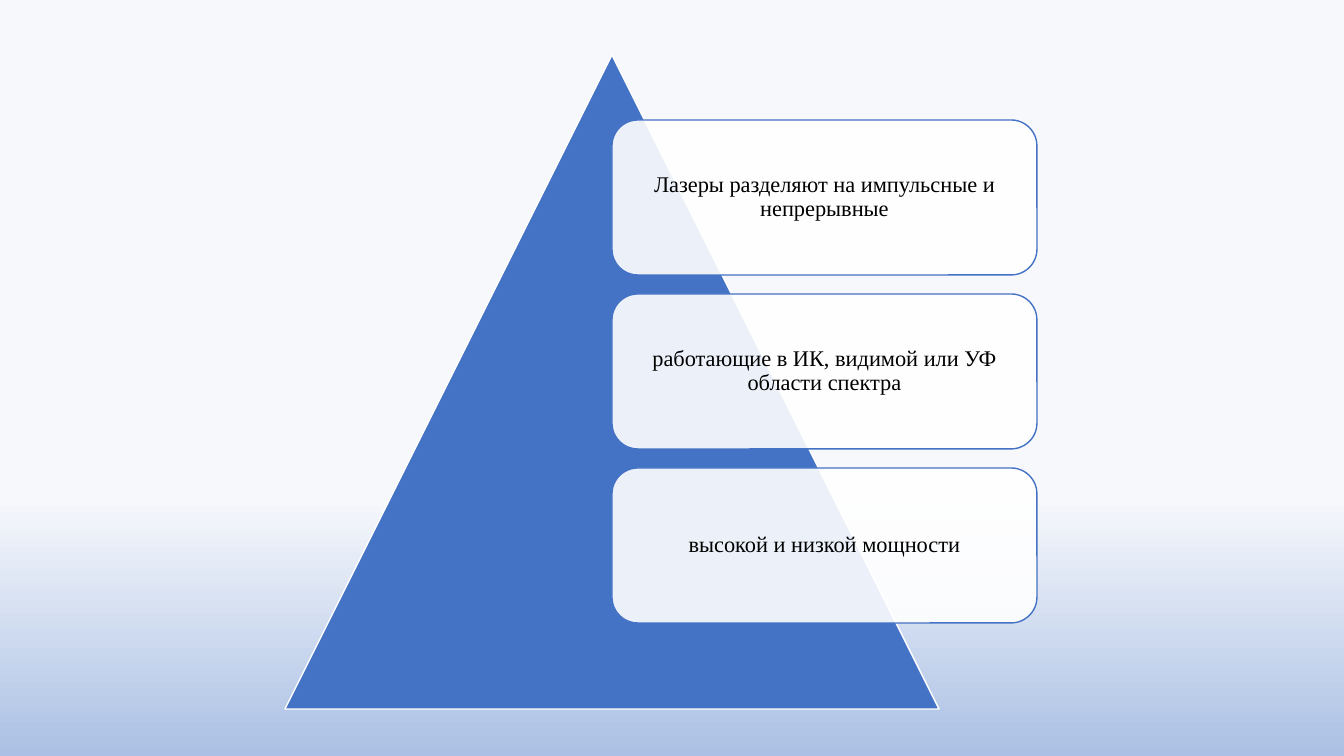
from dataclasses import dataclass

from lxml.etree import SubElement
from pptx import Presentation
from pptx.dml.color import RGBColor as RGB
from pptx.enum.shapes import MSO_SHAPE as SHAPE
from pptx.enum.text import MSO_ANCHOR, PP_ALIGN
from pptx.oxml.ns import qn
from pptx.util import Pt

PX = 914400 / 100.8
CARD_TEXTS = (
    "Лазеры разделяют на импульсные и непрерывные",
    "работающие в ИК, видимой или УФ области спектра",
    "высокой и низкой мощности",
)


@dataclass(frozen=True)
class Theme:
    accent: RGB = RGB(0x44, 0x72, 0xC4)
    white: RGB = RGB(0xFF, 0xFF, 0xFF)
    text: RGB = RGB(0, 0, 0)
    bg_top: RGB = RGB(0xF6, 0xF8, 0xFC)
    bg_bottom: RGB = RGB(0xAB, 0xC0, 0xE4)
    card_opacity: int = 90
    font: str = "Times New Roman"
    size: Pt = Pt(16)
    line: Pt = Pt(1)


THEME = Theme()


def px(n):
    return round(n * PX)


def add_background(s):
    fill = s.background.fill
    fill.gradient()
    fill.gradient_angle = 270
    stops = ((0.66, THEME.bg_top), (1, THEME.bg_bottom))
    for stop, (position, color) in zip(fill.gradient_stops, stops):
        stop.position = position
        stop.color.rgb = color


def add_outlined(s, kind, box, fill, line):
    sp = s.shapes.add_shape(kind, *map(px, box))
    sp.shadow.inherit = False
    sp.fill.solid()
    sp.fill.fore_color.rgb = fill
    sp.line.color.rgb = line
    sp.line.width = THEME.line
    return sp


def add_card(s, box, text):
    sp = add_outlined(s, SHAPE.ROUNDED_RECTANGLE, box, THEME.white, THEME.accent)
    color = sp.element.spPr.find(qn("a:solidFill"))[0]
    SubElement(color, qn("a:alpha"), val=str(THEME.card_opacity * 1000))
    tf = sp.text_frame
    tf.word_wrap = True
    tf.vertical_anchor = MSO_ANCHOR.MIDDLE
    tf.margin_left = tf.margin_right = tf.margin_top = tf.margin_bottom = px(15)
    p = tf.paragraphs[0]
    p.text = text
    p.alignment = PP_ALIGN.CENTER
    p.line_spacing = 0.9
    p.font.name = THEME.font
    p.font.size = THEME.size
    p.font.color.rgb = THEME.text


def add_pyramid_list(s, box, texts):
    """Triangle with a column of cards starting at its vertical axis."""
    left, top, width, height = box
    add_outlined(s, SHAPE.ISOSCELES_TRIANGLE, box, THEME.accent, THEME.white)
    card_w, card_h, gap = 425, 155, 19
    for i, text in enumerate(texts):
        y = top + 65 + i * (card_h + gap)
        add_card(s, (left + width // 2, y, card_w, card_h), text)


def main():
    prs = Presentation()
    prs.slide_width, prs.slide_height = px(1344), px(756)
    s = prs.slides.add_slide(prs.slide_layouts[6])
    add_background(s)
    add_pyramid_list(s, (285, 55, 654, 654), CARD_TEXTS)
    prs.save("out.pptx")


if __name__ == "__main__":
    main()
